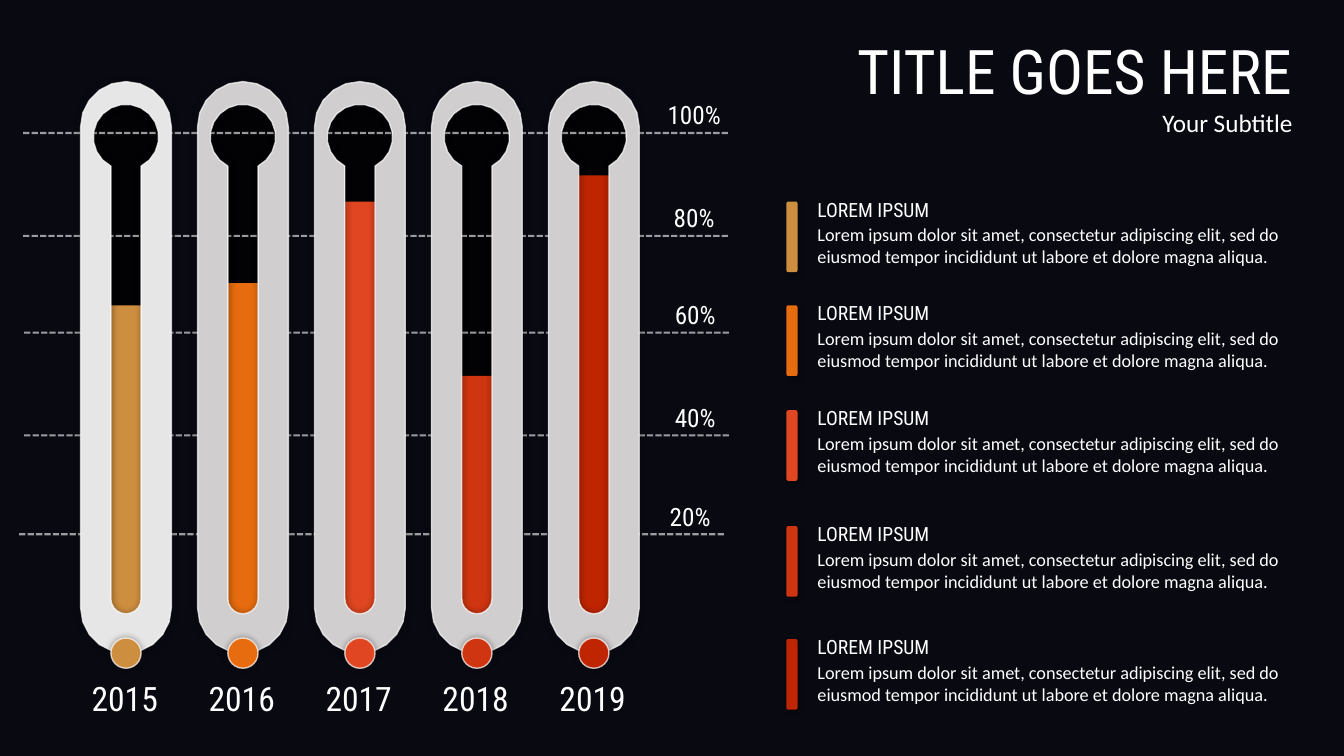
from dataclasses import dataclass
from math import acos, cos, degrees, radians, sin

from lxml import etree
from pptx import Presentation
from pptx.dml.color import RGBColor
from pptx.enum.dml import MSO_LINE
from pptx.enum.shapes import MSO_CONNECTOR, MSO_SHAPE
from pptx.enum.text import MSO_ANCHOR, MSO_AUTO_SIZE, PP_ALIGN
from pptx.oxml.ns import qn
from pptx.shapes.autoshape import Shape
from pptx.text.text import TextFrame
from pptx.util import Emu, Inches, Pt

RECT, ROUND, OVAL = MSO_SHAPE.RECTANGLE, MSO_SHAPE.ROUNDED_RECTANGLE, MSO_SHAPE.OVAL
LEFT, MID, RIGHT = PP_ALIGN.LEFT, PP_ALIGN.CENTER, PP_ALIGN.RIGHT
TOP, GROW = MSO_ANCHOR.TOP, MSO_AUTO_SIZE.SHAPE_TO_FIT_TEXT
DASH, STRAIGHT = MSO_LINE.SQUARE_DOT, MSO_CONNECTOR.STRAIGHT

NAVY = RGBColor(0x20, 0x21, 0x3D)
BLACK = RGBColor(0x00, 0x00, 0x00)
WHITE = RGBColor(0xFF, 0xFF, 0xFF)
PALE = RGBColor(0xE7, 0xE6, 0xE6)
GREY = RGBColor(0xD0, 0xCE, 0xCE)
GOLD = RGBColor(0xCE, 0x8E, 0x40)
AMBER = RGBColor(0xE7, 0x6C, 0x0F)
CORAL = RGBColor(0xE0, 0x46, 0x21)
RUST = RGBColor(0xCF, 0x35, 0x10)
RED = RGBColor(0xBF, 0x25, 0x00)

HEAD, BODY = "Roboto Condensed", "Calibri"
LOREM = ("Lorem ipsum dolor sit amet, consectetur adipiscing elit, sed do "
         "eiusmod tempor incididunt ut labore et dolore magna aliqua.")

# The grid has square cells: 133.3 columns by 75 rows
CELL = Inches(0.1)
COLS, ROWS = 133.3, 75
FIRST, PITCH = 12.5, 11.6  # centre of the first tube, step to the next
BASE = 61.7  # foot of the coloured columns
TURN = 18  # degrees between two points of an arc

Point = tuple[float, float]


@dataclass
class Tube:
    year: str
    color: RGBColor
    case: RGBColor
    level: float  # row where the colour starts
    key: float  # row of the legend bar


@dataclass
class Mark:
    label: str
    row: float
    shift: float


TUBES = [
    Tube("2015", GOLD, PALE, 30.3, 20),
    Tube("2016", AMBER, GREY, 28.1, 30.3),
    Tube("2017", CORAL, GREY, 20, 40.7),
    Tube("2018", RUST, GREY, 37.3, 52.2),
    Tube("2019", RED, GREY, 17.4, 63.4),
]
MARKS = [
    Mark("100%", 13.2, 0),
    Mark("80%", 23.4, 0),
    Mark("60%", 33, 0.1),
    Mark("40%", 43.2, 0.1),
    Mark("20%", 53, -0.4),
]


def grid(*cells: float) -> list[Emu]:
    return [Emu(round(n * CELL)) for n in cells]


def fade(shape, part: str, share: int) -> None:
    """Set the opacity, in percent, of the colour under part."""
    tint = shape.element.xpath(f"./p:spPr/{part}a:solidFill/a:srgbClr")[0]
    etree.SubElement(tint, qn("a:alpha"), val=str(share * 1000))


def paint(shape: Shape, color: RGBColor, rim: bool = False) -> Shape:
    shape.shadow.inherit = False
    shape.fill.solid()
    shape.fill.fore_color.rgb = color
    if rim:
        shape.line.color.rgb = WHITE
        shape.line.width = Pt(1)
        fade(shape, "a:ln/", 70)
    else:
        shape.line.fill.background()
    return shape


def shade(shape: Shape, blur: float, dist: float = 0, angle: int = 0) -> None:
    effect = shape.element.xpath("./p:spPr/a:effectLst")[0]
    outer = etree.SubElement(
        effect, qn("a:outerShdw"), blurRad=str(Pt(blur)), dist=str(Pt(dist)),
        dir=str(angle * 60000), algn="ctr", rotWithShape="0")
    tint = etree.SubElement(outer, qn("a:srgbClr"), val=str(BLACK))
    etree.SubElement(tint, qn("a:alpha"), val="40000")


def write(frame: TextFrame, lines: list[tuple[str, float, str]], align=LEFT) -> None:
    frame.word_wrap = True
    frame.auto_size = GROW
    frame.vertical_anchor = TOP
    for i, (text, size, face) in enumerate(lines):
        para = frame.add_paragraph() if i else frame.paragraphs[0]
        para.alignment = align
        run = para.add_run()
        run.text = text
        run.font.size, run.font.name = Pt(size), face
        run.font.color.rgb = WHITE


def label(slide, box: tuple, text: str, size: float, face: str = HEAD, align=LEFT) -> None:
    write(slide.shapes.add_textbox(*grid(*box)).text_frame, [(text, size, face)], align)


def arc(x: float, y: float, r: float, start: float, end: float) -> list[Point]:
    steps = round(abs(end - start) / TURN)
    turns = [radians(start + (end - start) * i / steps) for i in range(steps + 1)]
    return [(x + r * cos(t), y + r * sin(t)) for t in turns]


def pill(x: float, top: float, foot: float, r: float) -> list[Point]:
    return arc(x, top + r, r, 180, 360) + arc(x, foot - r, r, 0, 180)


def slot(x: float) -> list[Point]:
    """Keyhole: a bulb over a narrow channel with a round foot."""
    bulb, half = 3.25, 1.5
    neck = degrees(acos(half / bulb))
    return arc(x, 13.6, bulb, neck, -180 - neck) + arc(x, 59.4, half, 180, 0)


def trace(slide, *loops: list[Point]) -> Shape:
    rings = [[tuple(grid(*p)) for p in loop] for loop in loops]
    pen = slide.shapes.build_freeform(*rings[0][0], scale=1.0)
    for i, ring in enumerate(rings):
        if i:
            pen.move_to(*ring[0])
        pen.add_line_segments(ring[1:], close=True)
    return pen.convert_to_shape()


def draw_back(slide, x: float) -> None:
    back = slide.shapes.add_shape(ROUND, *grid(x - 4.2, 9.1, 8.5, 53.4))
    back.adjustments[0] = 0.5
    fade(paint(back, BLACK), "", 75)


def draw_mark(slide, mark: Mark) -> None:
    left = 2.3 + mark.shift
    line = slide.shapes.add_connector(
        STRAIGHT, *grid(left, mark.row, left + 70, mark.row))
    line.line.color.rgb = WHITE
    line.line.width = Pt(1.5)
    line.line.dash_style = DASH
    fade(line, "a:ln/", 60)
    etree.SubElement(line.element.spPr, qn("a:effectLst"))
    label(slide, (left + 62.5, mark.row - 3.8, 8.1, 4), mark.label, 18, align=MID)


def draw_tube(slide, tube: Tube, x: float) -> None:
    add = slide.shapes.add_shape
    paint(add(RECT, *grid(x - 3.5, tube.level, 7.1, BASE - tube.level)), tube.color)
    case = trace(slide, pill(x, 8.1, 64.8, 4.5), slot(x))
    shade(paint(case, tube.case, rim=True), 5)
    shade(paint(add(OVAL, *grid(x - 1.5, 63.3, 3, 3)), tube.color, rim=True), 5)
    label(slide, (x - 4.4, 66.8, 8.8, 5), tube.year, 24)


def draw_key(slide, tube: Tube) -> None:
    label(slide, (80.1, tube.key + 1.7, 49.6, 7.6), LOREM, 13, BODY)
    label(slide, (80.1, tube.key - 0.9, 31, 3.4), "LOREM IPSUM", 14)
    bar = slide.shapes.add_shape(ROUND, *grid(78, tube.key, 1.1, 7))
    shade(paint(bar, tube.color), 4, 3, 45)


def main() -> None:
    deck = Presentation()
    deck.slide_width, deck.slide_height = grid(COLS, ROWS)
    slide = deck.slides.add_slide(deck.slide_layouts[5])

    # Backdrop, with a dark veil behind everything
    slide.background.fill.solid()
    slide.background.fill.fore_color.rgb = NAVY
    veil = paint(slide.shapes.add_shape(RECT, *grid(0, 0, COLS, ROWS)), BLACK)
    fade(veil, "", 70)
    veil.element.getparent().insert(2, veil.element)

    # Title and subtitle
    title = slide.shapes.title
    title.left, title.top, title.width, title.height = grid(69, 2.8, 60.2, 11.4)
    write(title.text_frame,
          [("TITLE GOES HERE", 44, HEAD), ("Your Subtitle", 18, BODY)], RIGHT)

    # Dark tube backs, scale lines, tubes, legend
    spots = [FIRST + i * PITCH for i in range(len(TUBES))]
    for x in spots:
        draw_back(slide, x)
    for mark in MARKS:
        draw_mark(slide, mark)
    for tube, x in zip(TUBES, spots):
        draw_tube(slide, tube, x)
    for tube in TUBES:
        draw_key(slide, tube)

    deck.save("out.pptx")


if __name__ == "__main__":
    main()
